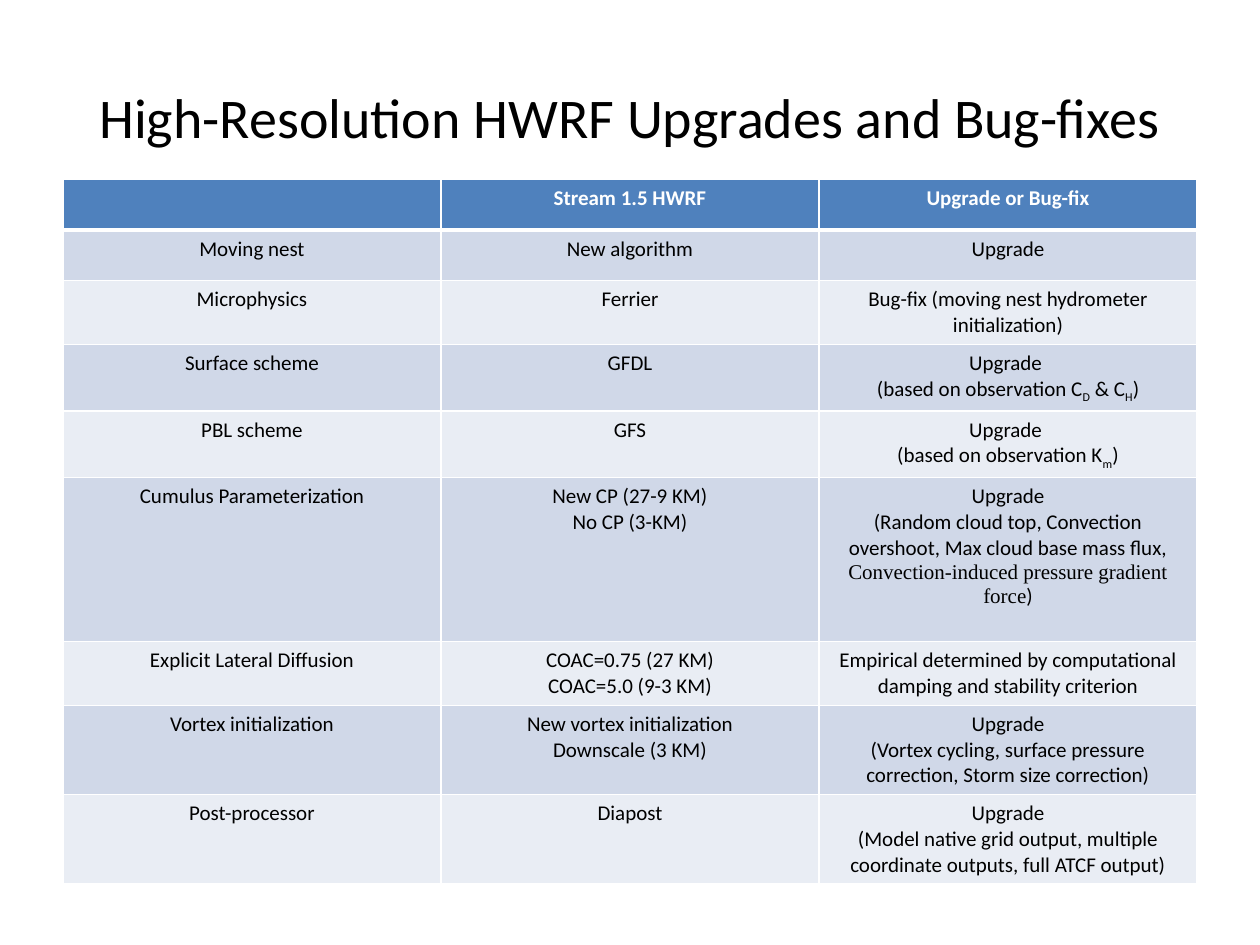
import pptx
import pptx.dml.color
import pptx.enum.text
import pptx.oxml.ns
import pptx.util
import lxml.etree

COLORS = {
    "text": "000000",
    "white": "FFFFFF",
    "header": "4F81BD",
    "odd row": "D0D8E8",
    "even row": "E9EDF4",
}
COLUMN_WIDTH = 3
ROW_HEIGHT = 0.4
TALL_ROWS = {5: 1.3}

DRAG = [("(based on observation C", ""), ("D", "subscript"), (" & C", ""),
        ("H", "subscript"), (")", "")]
DIFFUSIVITY = [("(based on observation K", ""), ("m", "subscript"), (")", "")]
CONVECTION = [
    ("(Random cloud top, Convection overshoot, Max cloud base mass flux, ", ""),
    ("Convection-induced pressure gradient force", "serif"),
    (")", ""),
]

ROWS = [
    [[], ["Stream 1.5 HWRF"], ["Upgrade or Bug-fix"]],
    [["Moving nest"], ["New algorithm"], ["Upgrade"]],
    [["Microphysics"], ["Ferrier"],
     ["Bug-fix (moving nest hydrometer initialization)"]],
    [["Surface scheme"], ["GFDL"], ["Upgrade ", DRAG]],
    [["PBL scheme"], ["GFS"], ["Upgrade ", DIFFUSIVITY]],
    [["Cumulus Parameterization"], ["New CP (27-9 KM)", "No CP (3-KM)"],
     ["Upgrade", CONVECTION]],
    [["Explicit Lateral Diffusion"],
     ["COAC=0.75 (27 KM)", "COAC=5.0 (9-3 KM)"],
     ["Empirical determined by computational damping and stability criterion"]],
    [["Vortex initialization"],
     ["New vortex initialization", "Downscale (3 KM)"],
     ["Upgrade",
      "(Vortex cycling, surface pressure correction, Storm size correction)"]],
    [["Post-processor"], ["Diapost"],
     ["Upgrade",
      "(Model native grid output, multiple coordinate outputs, full ATCF output)"]],
]


class SlideBuilder:
    font = "Calibri"
    serif_font = "Times New Roman"
    title_size = 32
    table_size = 12

    def __init__(self, presentation):
        self.slide = presentation.slides.add_slide(presentation.slide_layouts[5])

    def color(self, name):
        return pptx.dml.color.RGBColor.from_string(COLORS[name])

    def run(self, paragraph, text, size, color, bold=False, style=""):
        run = paragraph.add_run()
        run.text = text
        run.font.name = self.serif_font if style == "serif" else self.font
        run.font.size = pptx.util.Pt(size)
        run.font.bold = bold
        run.font.color.rgb = self.color(color)
        if style == "subscript":
            run._r.get_or_add_rPr().set("baseline", "-25000")

    def title(self, text, left, top, width, height):
        shape = self.slide.shapes.title
        shape.left, shape.top = pptx.util.Inches(left), pptx.util.Inches(top)
        shape.width, shape.height = pptx.util.Inches(width), pptx.util.Inches(height)
        shape.text_frame.word_wrap = True
        shape.text_frame.vertical_anchor = pptx.enum.text.MSO_ANCHOR.MIDDLE
        paragraph = shape.text_frame.paragraphs[0]
        paragraph.alignment = pptx.enum.text.PP_ALIGN.CENTER
        self.run(paragraph, text, self.title_size, "text")

    def borders(self, cell, widths):
        properties = cell._tc.get_or_add_tcPr()
        qualified = pptx.oxml.ns.qn
        for side, width in widths.items():
            line = lxml.etree.SubElement(
                properties, qualified("a:ln" + side), w=str(pptx.util.Pt(width)))
            fill = lxml.etree.SubElement(line, qualified("a:solidFill"))
            lxml.etree.SubElement(fill, qualified("a:srgbClr"), val=COLORS["white"])

    def cell(self, cell, paragraphs, fill, color, bold, borders):
        self.borders(cell, borders)
        cell.fill.solid()
        cell.fill.fore_color.rgb = self.color(fill)
        for index, content in enumerate(paragraphs):
            frame = cell.text_frame
            paragraph = frame.add_paragraph() if index else frame.paragraphs[0]
            paragraph.alignment = pptx.enum.text.PP_ALIGN.CENTER
            runs = [(content, "")] if isinstance(content, str) else content
            for text, style in runs:
                self.run(paragraph, text, self.table_size, color, bold, style)

    def table(self, rows, left, top):
        column_count = len(rows[0])
        table = self.slide.shapes.add_table(
            len(rows), column_count, pptx.util.Inches(left), pptx.util.Inches(top),
            pptx.util.Inches(COLUMN_WIDTH * column_count),
            pptx.util.Inches(ROW_HEIGHT * len(rows))).table
        for row_index, row in enumerate(rows):
            table.rows[row_index].height = pptx.util.Inches(
                TALL_ROWS.get(row_index, ROW_HEIGHT))
            header = row_index == 0
            band = "odd row" if row_index % 2 else "even row"
            borders = {"L": 1, "R": 1, "T": 3 if row_index == 1 else 1,
                       "B": 3 if header else 1}
            for column_index, paragraphs in enumerate(row):
                self.cell(table.cell(row_index, column_index), paragraphs,
                          "header" if header else band,
                          "white" if header else "text", header, borders)


def main():
    presentation = pptx.Presentation()
    presentation.slide_width = pptx.util.Inches(10)
    presentation.slide_height = pptx.util.Inches(7.5)
    builder = SlideBuilder(presentation)
    builder.title("High-Resolution HWRF Upgrades and Bug-fixes", 0.5, 0.3, 9, 1.25)
    builder.table(ROWS, 0.5, 1.42)
    presentation.save("out.pptx")


if __name__ == "__main__":
    main()
